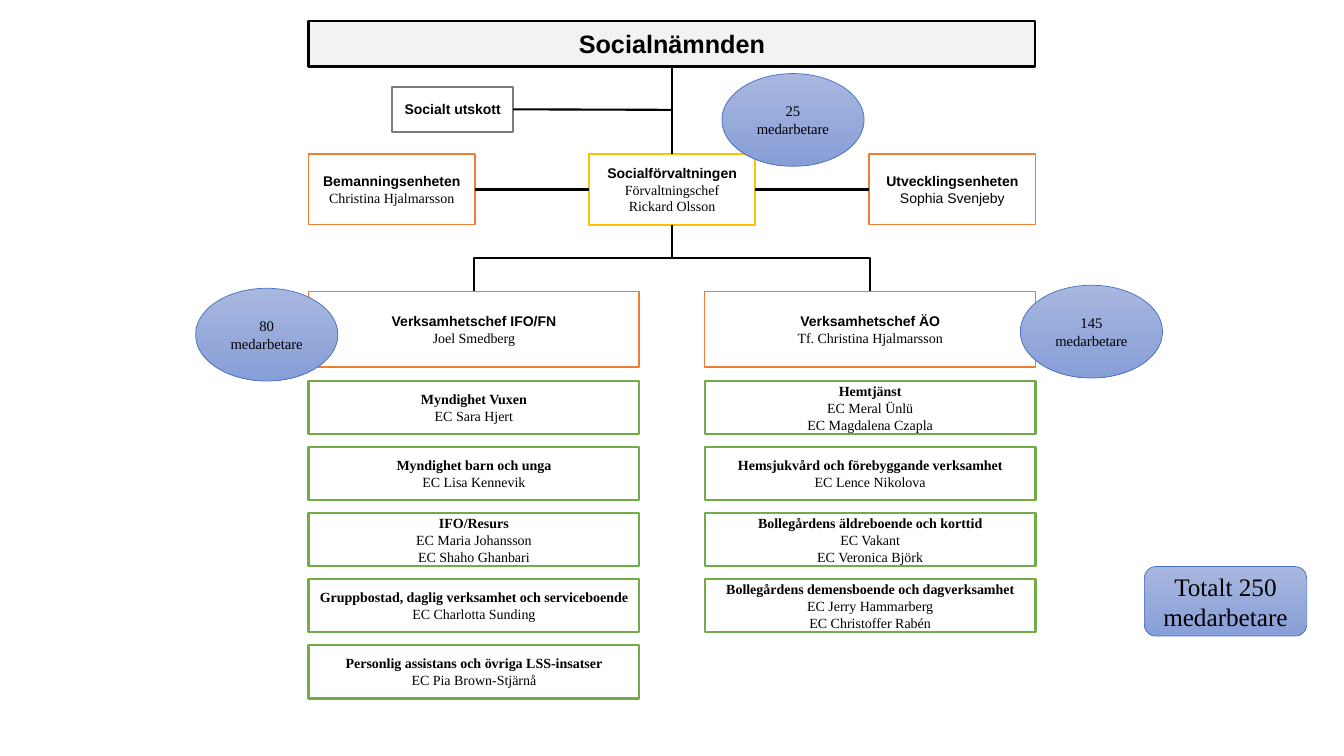
from lxml.etree import SubElement
from pptx import Presentation
from pptx.dml.color import RGBColor
from pptx.enum.shapes import MSO_CONNECTOR, MSO_SHAPE
from pptx.enum.text import MSO_ANCHOR, PP_ALIGN
from pptx.oxml.ns import qn
from pptx.util import Inches, Pt

BLACK = RGBColor(0x00, 0x00, 0x00)
WHITE = RGBColor(0xFF, 0xFF, 0xFF)
PALE = RGBColor(0xF2, 0xF2, 0xF2)
GRAY = RGBColor(0x7C, 0x7C, 0x7C)
GOLD = RGBColor(0xFF, 0xC0, 0x00)
ORANGE = RGBColor(0xED, 0x7D, 0x31)
GREEN = RGBColor(0x70, 0xAD, 0x47)
BLUE = RGBColor(0x44, 0x72, 0xC4)
LIGHT = RGBColor(0xA8, 0xB7, 0xDF)
DEEP = RGBColor(0x88, 0x9E, 0xD7)
SANS, SERIF = "Arial", "Times New Roman"

# Grid in inches: outer edges, centre line, box widths and row tops
WIDE, HIGH = 13.33, 7.5
LEFT, RIGHT = 3.06, 10.27
MID = (LEFT + RIGHT) / 2
SMALL, BROAD = 1.65, 3.28
STAFF, CHIEF, UNITS = 1.53, 2.89, 3.78
STEP = 2.62 / 4
ROW = 0.53

# Units under each head: (column left, entries)
TEAMS = [
    (LEFT, [
        ["Myndighet Vuxen", "EC Sara Hjert"],
        ["Myndighet barn och unga", "EC Lisa Kennevik"],
        ["IFO/Resurs", "EC Maria Johansson", "EC Shaho Ghanbari"],
        ["Gruppbostad, daglig verksamhet och serviceboende",
         "EC Charlotta Sunding"],
        ["Personlig assistans och övriga LSS-insatser",
         "EC Pia Brown-Stjärnå"],
    ]),
    (RIGHT - BROAD, [
        ["Hemtjänst", "EC Meral Ünlü", "EC Magdalena Czapla"],
        ["Hemsjukvård och förebyggande verksamhet", "EC Lence Nikolova"],
        ["Bollegårdens äldreboende och korttid", "EC Vakant",
         "EC Veronica Björk"],
        ["Bollegårdens demensboende och dagverksamhet",
         "EC Jerry Hammarberg", "EC Christoffer Rabén"],
    ]),
]


def add_form(slide, kind, area, edge, width):
    form = slide.shapes.add_shape(kind, *map(Inches, area))
    form.shadow.inherit = False
    form.line.color.rgb = edge
    form.line.width = Pt(width)
    form.text_frame.vertical_anchor = MSO_ANCHOR.MIDDLE
    return form


def write(para, text, face, size, bold=False):
    para.text = text
    para.alignment = PP_ALIGN.CENTER
    font = para.font
    font.name, font.size, font.bold = face, Pt(size), bold
    font.color.rgb = BLACK


def add_box(slide, area, edge, lines, head=SANS, body=SERIF, width=1.5,
            size=10, fill=WHITE):
    """Box with a bold title and plain lines below it."""
    box = add_form(slide, MSO_SHAPE.RECTANGLE, area, edge, width)
    box.fill.solid()
    box.fill.fore_color.rgb = fill
    frame = box.text_frame
    write(frame.paragraphs[0], lines[0], head, size, True)
    for text in lines[1:]:
        write(frame.add_paragraph(), text, body, size)
    return box


def add_count(slide, kind, area, text, size):
    """Staff count on a blue gradient."""
    form = add_form(slide, kind, area, BLUE, 0.5)
    form.fill.gradient()
    form.fill.gradient_angle = 270
    for stop, shade in zip(form.fill.gradient_stops, (LIGHT, DEEP)):
        stop.color.rgb = shade
    write(form.text_frame.paragraphs[0], text, SERIF, size)


def add_line(slide, start, end, kind=MSO_CONNECTOR.STRAIGHT):
    line = slide.shapes.add_connector(kind, *map(Inches, (*start, *end)))
    line.line.color.rgb = BLACK
    line.line.width = Pt(1.5)
    SubElement(line._element.spPr, qn("a:effectLst"))
    return line


def join(slide, one, side, two, other):
    line = add_line(slide, (0, 0), (1, 1))
    line.begin_connect(one, side)
    line.end_connect(two, other)


def add_elbow(slide, top, foot, reach):
    """Elbow that leaves the centre line downwards; reach < 0 goes left."""
    mid_x, mid_y = MID + reach / 2, (top + foot) / 2
    tall, span = (foot - top) / 2, abs(reach) / 2
    side = 1 if reach > 0 else -1
    line = add_line(slide, (mid_x + side * tall, mid_y - span),
                    (mid_x - side * tall, mid_y + span), MSO_CONNECTOR.ELBOW)
    turn = 270 if reach > 0 else 90
    line._element.spPr.find(qn("a:xfrm")).set("rot", str(turn * 60000))


def main():
    deck = Presentation()
    deck.slide_width, deck.slide_height = Inches(WIDE), Inches(HIGH)
    slide = deck.slides.add_slide(deck.slide_layouts[6])

    # Board and administration
    board = add_box(slide, (LEFT, 0.21, RIGHT - LEFT, 0.45), BLACK,
                    ["Socialnämnden"], size=18, fill=PALE)
    office = add_box(slide, (MID - SMALL / 2, STAFF, SMALL, 0.7), GOLD,
                     ["Socialförvaltningen", "Förvaltningschef",
                      "Rickard Olsson"])
    panel = add_box(slide, (3.89, 0.86, 1.2, 0.45), GRAY, ["Socialt utskott"])
    crew = add_box(slide, (LEFT, STAFF, SMALL, 0.7), ORANGE,
                   ["Bemanningsenheten", "Christina Hjalmarsson"], width=1)
    growth = add_box(slide, (RIGHT - SMALL, STAFF, SMALL, 0.7), ORANGE,
                     ["Utvecklingsenheten", "Sophia Svenjeby"],
                     body=SANS, width=1)

    # Straight links
    join(slide, board, 2, office, 0)
    join(slide, office, 3, growth, 1)
    join(slide, office, 1, crew, 3)
    add_line(slide, (5.09, 1.09), (MID, 1.09)).begin_connect(panel, 3)

    # Heads of operations and their units
    heads = [["Verksamhetschef IFO/FN", "Joel Smedberg"],
             ["Verksamhetschef ÄO", "Tf. Christina Hjalmarsson"]]
    for head, (left, units) in zip(heads, TEAMS):
        add_box(slide, (left, CHIEF, BROAD, 0.75), ORANGE, head, width=1)
        for row, unit in enumerate(units):
            add_box(slide, (left, UNITS + row * STEP, BROAD, ROW), GREEN,
                    unit, head=SERIF)
        add_elbow(slide, STAFF + 0.7, CHIEF, left + BROAD / 2 - MID)

    # Staff counts
    add_count(slide, MSO_SHAPE.ROUNDED_RECTANGLE, (11.35, 5.62, 1.61, 0.69),
              "Totalt 250 medarbetare", 18)
    for left, top, count in ((1.94, 2.86, 80), (10.12, 2.83, 145),
                             (7.16, 0.73, 25)):
        add_count(slide, MSO_SHAPE.OVAL, (left, top, 1.41, 0.92),
                  f"{count} medarbetare", 10.5)

    deck.save("out.pptx")


if __name__ == "__main__":
    main()
